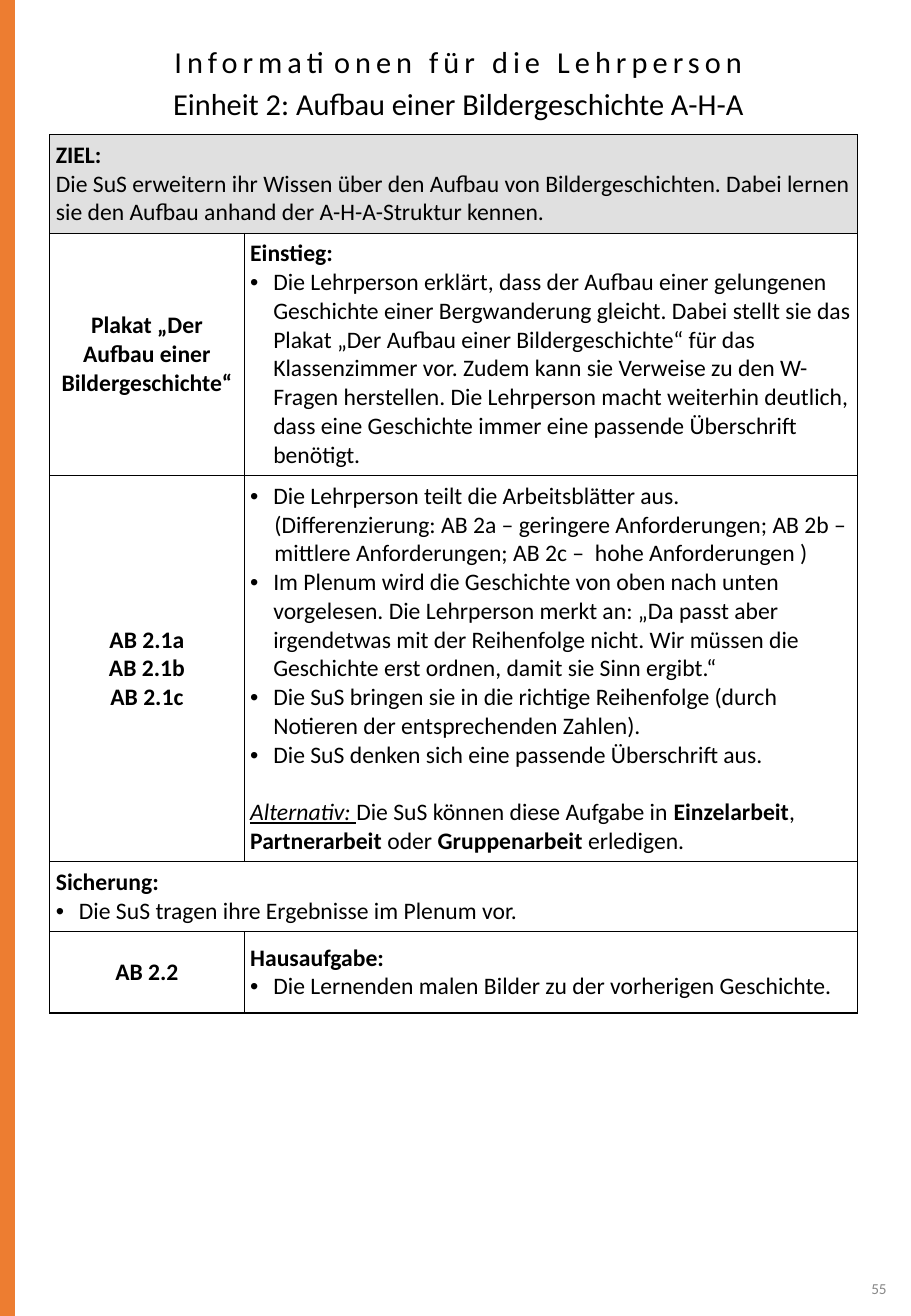
import lxml.etree
import pptx
import pptx.dml.color
import pptx.enum.shapes
import pptx.enum.text
import pptx.oxml.ns
import pptx.util
from dataclasses import dataclass

PX = 9144  # 100 px to the inch
ALIGN = pptx.enum.text.PP_ALIGN
MIDDLE = pptx.enum.text.MSO_ANCHOR.MIDDLE
qn = pptx.oxml.ns.qn


@dataclass(frozen=True)
class Theme:
    font: str = "Calibri"
    ink: str = "000000"
    muted: str = "888888"
    accent: str = "ED7D31"
    goal_fill: str = "E0E0E0"
    paper: str = "FFFFFF"
    heading: int = 18
    body: int = 14
    number: int = 9
    stripe: int = 10
    border: float = 0.75
    inset: int = 5


THEME = Theme()
BOLD = {"bold": True}
PLAIN = {}
HINT = {"italic": True, "underline": True}

# Paragraph kinds: left margin and first-line indent in px, further formats
KINDS = {
    "text": (0, 0, {}),
    "bullet": (19, -19, {}),
    "inset": (20, 0, {}),
    "label": (0, 0, {"alignment": ALIGN.CENTER}),
    "apart": (0, 0, {"space_before": pptx.util.Pt(17)}),
}


def head(text):
    return "text", [(text, BOLD)]


def label(text):
    return "label", [(text, BOLD)]


def plain(kind, text):
    return kind, [(text, PLAIN)]


# Lesson rows: height, fill, cells; a single cell spans both columns
LESSON = [
    (81, THEME.goal_fill, [[
        head("ZIEL:"),
        plain("text", "Die SuS erweitern ihr Wissen über den Aufbau von Bildergeschichten. Dabei lernen "
              "sie den Aufbau anhand der A-H-A-Struktur kennen."),
    ]]),
    (199, None, [[label("Plakat „Der Aufbau einer Bildergeschichte“")], [
        head("Einstieg:"),
        plain("bullet", "Die Lehrperson erklärt, dass der Aufbau einer gelungenen Geschichte einer "
              "Bergwanderung gleicht. Dabei stellt sie das Plakat „Der Aufbau einer "
              "Bildergeschichte“ für das Klassenzimmer vor. Zudem kann sie Verweise zu den "
              "W-Fragen herstellen. Die Lehrperson macht weiterhin deutlich, dass eine "
              "Geschichte immer eine passende Überschrift benötigt."),
    ]]),
    (318, None, [[label(f"AB 2.1{version}") for version in "abc"], [
        plain("bullet", "Die Lehrperson teilt die Arbeitsblätter aus."),
        plain("inset", "(Differenzierung: AB 2a – geringere Anforderungen; AB 2b – mittlere "
              "Anforderungen; AB 2c –  hohe Anforderungen )"),
        plain("bullet", "Im Plenum wird die Geschichte von oben nach unten vorgelesen. Die Lehrperson "
              "merkt an: „Da passt aber irgendetwas mit der Reihenfolge nicht. Wir müssen die "
              "Geschichte erst ordnen, damit sie Sinn ergibt.“"),
        plain("bullet", "Die SuS bringen sie in die richtige Reihenfolge (durch Notieren der "
              "entsprechenden Zahlen)."),
        plain("bullet", "Die SuS denken sich eine passende Überschrift aus."),
        ("apart", [
            ("Alternativ: ", HINT), ("Die SuS können diese Aufgabe in ", PLAIN),
            ("Einzelarbeit", BOLD), (", ", PLAIN), ("Partnerarbeit", BOLD),
            (" oder ", PLAIN), ("Gruppenarbeit", BOLD), (" erledigen.", PLAIN),
        ]),
    ]]),
    (57, THEME.paper, [[
        head("Sicherung:"),
        plain("bullet", "Die SuS tragen ihre Ergebnisse im Plenum vor."),
    ]]),
    (67, THEME.paper, [[label("AB 2.2")], [
        head("Hausaufgabe:"),
        plain("bullet", "Die Lernenden malen Bilder zu der vorherigen Geschichte."),
    ]]),
]


def rgb(value):
    return pptx.dml.color.RGBColor.from_string(value)


def apply(target, formats):
    for name, value in formats.items():
        setattr(target, name, value)


def insets():
    return {f"margin_{side}": THEME.inset * PX for side in ("left", "right", "top", "bottom")}


def add_run(paragraph, text, size, color, formats):
    run = paragraph.add_run()
    run.text = text
    apply(run.font, {"name": THEME.font, "size": pptx.util.Pt(size), **formats})
    run.font.color.rgb = rgb(color)
    return run


def write_paragraphs(frame, content):
    for index, (kind, runs) in enumerate(content):
        paragraph = frame.add_paragraph() if index else frame.paragraphs[0]
        margin, indent, formats = KINDS[kind]
        apply(paragraph, formats)
        properties = paragraph._p.get_or_add_pPr()
        properties.set("marL", str(margin * PX))
        properties.set("indent", str(indent * PX))
        if kind == "bullet":
            lxml.etree.SubElement(properties, qn("a:buFont"), typeface="Arial")
            lxml.etree.SubElement(properties, qn("a:buChar"), char="•")
        for text, run_formats in runs:
            add_run(paragraph, text, THEME.body, THEME.ink, run_formats)


def add_borders(cell):
    properties = cell._tc.get_or_add_tcPr()
    for position, side in enumerate(("lnL", "lnR", "lnT", "lnB")):
        border = lxml.etree.Element(qn(f"a:{side}"), w=str(pptx.util.Pt(THEME.border)))
        fill = lxml.etree.SubElement(border, qn("a:solidFill"))
        lxml.etree.SubElement(fill, qn("a:srgbClr"), val=THEME.ink)
        properties.insert(position, border)


def add_lesson_table(slide, left, top, columns):
    height = sum(row[0] for row in LESSON)
    lesson = slide.shapes.add_table(len(LESSON), len(columns), left * PX, top * PX,
                                    sum(columns) * PX, height * PX).table
    apply(lesson, {"first_row": False, "horz_banding": False})
    for column, width in zip(lesson.columns, columns):
        column.width = width * PX
    for index, (row_height, fill, contents) in enumerate(LESSON):
        row = lesson.rows[index]
        row.height = row_height * PX
        for cell in row.cells:
            if fill:
                cell.fill.solid()
                cell.fill.fore_color.rgb = rgb(fill)
            else:
                cell.fill.background()
            apply(cell, {"vertical_anchor": MIDDLE, **insets()})
            add_borders(cell)
        if len(contents) == 1:
            row.cells[0].merge(row.cells[1])
        for cell, content in zip(row.cells, contents):
            write_paragraphs(cell.text_frame, content)


def add_line_of_text(slide, box, text, size, color, align, spacing=0, **frame_formats):
    frame = slide.shapes.add_textbox(*(length * PX for length in box)).text_frame
    apply(frame, {"word_wrap": True, **insets(), **frame_formats})
    frame.auto_size = pptx.enum.text.MSO_AUTO_SIZE.SHAPE_TO_FIT_TEXT
    frame.paragraphs[0].alignment = align
    run = add_run(frame.paragraphs[0], text, size, color, PLAIN)
    if spacing:
        run.font._element.set("spc", str(spacing * 100))


def add_headings(slide, left, top, width):
    headings = [("Einheit 2: Aufbau einer Bildergeschichte A-H-A", 34, 0),
                ("Informationen für die Lehrperson", 0, 3)]
    for text, offset, spacing in headings:
        add_line_of_text(slide, (left, top + offset, width, 40), text,
                         THEME.heading, THEME.ink, ALIGN.CENTER, spacing)


def add_side_stripe(slide, x, height):
    stripe = slide.shapes.add_connector(pptx.enum.shapes.MSO_CONNECTOR.STRAIGHT,
                                        x * PX, 0, x * PX, height * PX)
    stripe.line.color.rgb = rgb(THEME.accent)
    stripe.line.width = pptx.util.Pt(THEME.stripe)
    lxml.etree.SubElement(stripe._element.spPr, qn("a:effectLst"))


def main():
    width, height = 750, 1083
    deck = pptx.Presentation()
    apply(deck, {"slide_width": width * PX, "slide_height": height * PX})
    slide = deck.slides.add_slide(deck.slide_layouts[6])
    add_lesson_table(slide, 41, 111, (160, 505))
    add_headings(slide, 17, 31, 721)
    # Page number
    add_line_of_text(slide, (711, 1048, 24, 25), "55", THEME.number, THEME.muted,
                     ALIGN.RIGHT, word_wrap=False, vertical_anchor=MIDDLE)
    add_side_stripe(slide, 5, height)
    deck.save("out.pptx")


if __name__ == "__main__":
    main()
